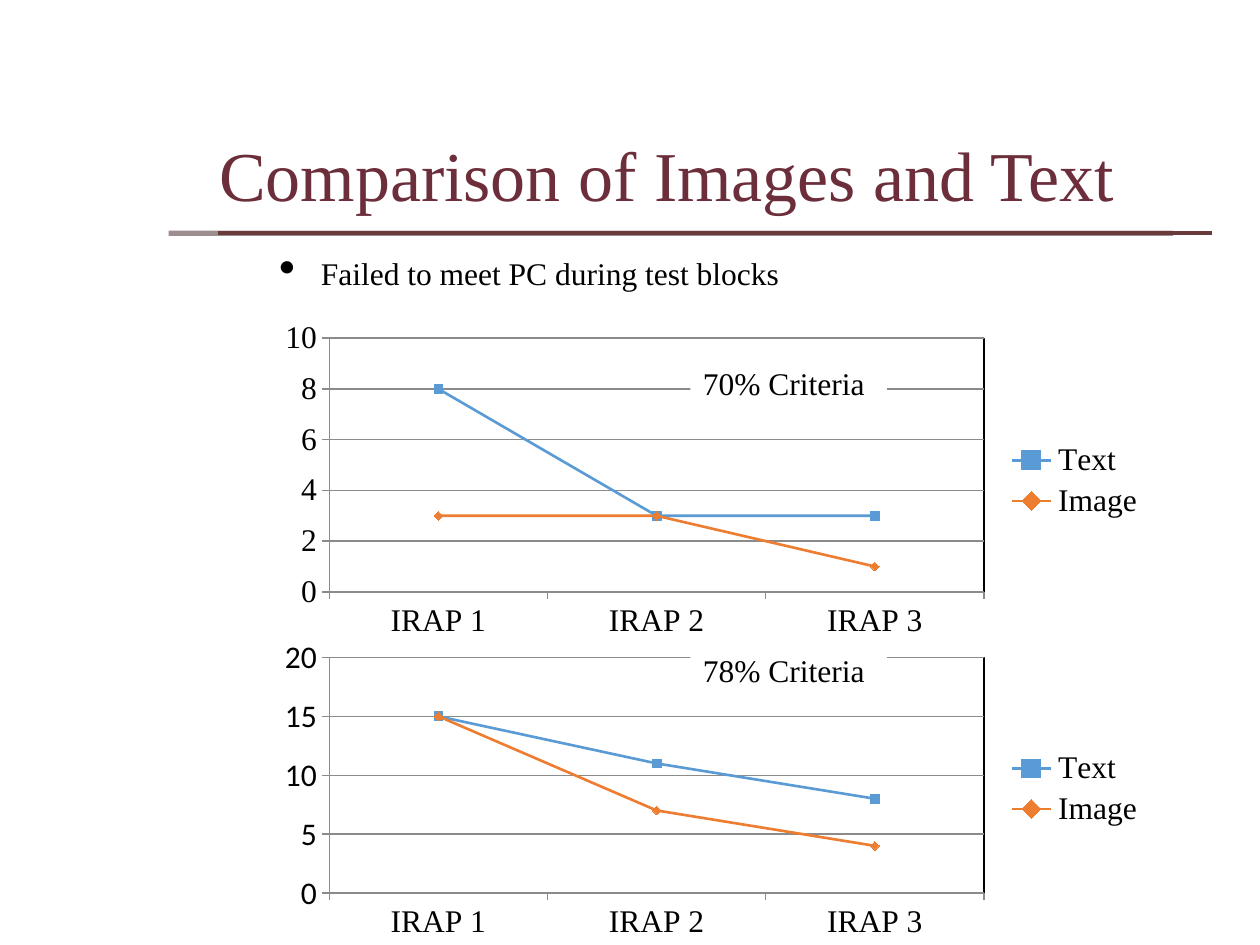
"""Build the "Comparison of Images and Text" slide with two line charts."""
from lxml.etree import SubElement
from pptx import Presentation
from pptx.chart.data import CategoryChartData
from pptx.dml.color import RGBColor
from pptx.enum.chart import (XL_CHART_TYPE as CT, XL_LEGEND_POSITION as LP,
                             XL_MARKER_STYLE as MS, XL_TICK_MARK as TM)
from pptx.enum.shapes import MSO_CONNECTOR as CONN, MSO_SHAPE as SHAPE
from pptx.enum.text import MSO_ANCHOR as ANCHOR
from pptx.oxml import parse_xml
from pptx.oxml.ns import nsdecls, qn
from pptx.util import Cm, Pt

SERIF, SANS = "Times New Roman", "Calibri"
COLORS = {"title": "6B2E3A", "text": "000000", "rule": "683A3C", "shade": "3C1C21",
          "grid": "8B8B8B", "frame": "000000", "mask": "FFFFFF",
          "Text": "5B9BD5", "Image": "ED7D31"}
MARKERS = {"Text": MS.SQUARE, "Image": MS.DIAMOND}
CATEGORIES = ["IRAP 1", "IRAP 2", "IRAP 3"]
CHART_LEFT, CHART_WIDTH = 5.38, 17.96


def rgb(name):
    return RGBColor.from_string(COLORS[name])


def set_font(font, size, color="text", name=SERIF):
    font.size, font.name = Pt(size), name
    font.color.rgb = rgb(color)


def add_rule(s, x1, x2, y, color, width, alpha=None):
    line = s.shapes.add_connector(CONN.STRAIGHT, Cm(x1), Cm(y), Cm(x2), Cm(y))
    line.line.color.rgb, line.line.width = rgb(color), Pt(width)
    sp_pr = line._element.spPr
    if alpha:
        clr = sp_pr.find(".//" + qn("a:srgbClr"))
        SubElement(clr, qn("a:alpha"), val=str(alpha * 1000))
    SubElement(sp_pr, qn("a:effectLst"))


def add_text(s, box, text, size, color="text", spacing=0.9):
    tb = s.shapes.add_textbox(*map(Cm, box))
    tf = tb.text_frame
    tf.word_wrap = True
    p = tf.paragraphs[0]
    p.text, p.line_spacing = text, spacing
    set_font(p.font, size, color)
    return tb


def add_title(s, box, text):
    tf = add_text(s, box, text, 40, "title").text_frame
    tf.vertical_anchor, tf.margin_bottom = ANCHOR.BOTTOM, Cm(0.33)


def add_bullet(s, box, text):
    p = add_text(s, box, text, 18).text_frame.paragraphs[0]
    p_pr = p._p.get_or_add_pPr()
    p_pr.set("marL", str(Cm(0.84)))
    p_pr.set("indent", str(Cm(-0.84)))
    for xml in ('<a:buSzPct %s val="150000"/>', '<a:buChar %s char="•"/>'):
        p_pr.insert_element_before(parse_xml(xml % nsdecls("a")), "a:tabLst", "a:defRPr")


def add_label(s, top, text):
    sp = s.shapes.add_shape(SHAPE.RECTANGLE, Cm(13.92), Cm(top), Cm(3.96), Cm(1.02))
    sp.shadow.inherit = False
    sp.fill.solid()
    sp.fill.fore_color.rgb = rgb("mask")
    sp.line.fill.background()
    tf = sp.text_frame
    tf.vertical_anchor, tf.word_wrap = ANCHOR.TOP, False
    p = tf.paragraphs[0]
    p.text, p.alignment = text, 1
    set_font(p.font, 18)


def frame_plot(chart, y, h):
    """Fix the inner plot area, as fractions of the chart, and outline it."""
    plot = chart._chartSpace.find(".//" + qn("c:plotArea"))
    for old in plot.findall(qn("c:layout")):
        plot.remove(old)
    sizes = "".join(f'<c:{k} val="{v}"/>' for k, v in
                    zip("xywh", (0.07, y, 0.735, h)))
    plot.insert(0, parse_xml(
        f'<c:layout {nsdecls("c")}><c:manualLayout><c:layoutTarget val="inner"/>'
        f'<c:xMode val="edge"/><c:yMode val="edge"/>{sizes}</c:manualLayout></c:layout>'))
    plot.append(parse_xml(
        f'<c:spPr {nsdecls("c", "a")}><a:noFill/><a:ln w="9525"><a:solidFill>'
        f'<a:srgbClr val="{COLORS["frame"]}"/></a:solidFill></a:ln></c:spPr>'))


def add_line_chart(s, top, height, series, top_value, step, plot, value_font=SERIF):
    data = CategoryChartData()
    data.categories = CATEGORIES
    for name, values in series.items():
        data.add_series(name, values)
    chart = s.shapes.add_chart(CT.LINE_MARKERS, Cm(CHART_LEFT), Cm(top),
                               Cm(CHART_WIDTH), Cm(height), data).chart
    set_font(chart.font, 18, name=value_font)
    chart.has_title = False
    chart.has_legend = True
    chart.legend.position, chart.legend.include_in_layout = LP.RIGHT, False
    set_font(chart.legend.font, 18)
    cat, val = chart.category_axis, chart.value_axis
    val.minimum_scale, val.maximum_scale, val.major_unit = 0, top_value, step
    val.has_major_gridlines = True
    val.major_gridlines.format.line.color.rgb = rgb("grid")
    for axis, font in ((cat, SERIF), (val, value_font)):
        axis.major_tick_mark = TM.OUTSIDE
        axis.format.line.color.rgb = rgb("grid")
        set_font(axis.tick_labels.font, 18, name=font)
    chart.plots[0].vary_by_categories = False
    for ser in chart.plots[0].series:
        color, marker = rgb(ser.name), ser.marker
        ser.smooth = False
        ser.format.line.color.rgb, ser.format.line.width = color, Pt(1.5)
        marker.style, marker.size = MARKERS[ser.name], 5
        marker.format.fill.solid()
        marker.format.fill.fore_color.rgb = color
        marker.format.line.color.rgb = color
    frame_plot(chart, *plot)


def main():
    prs = Presentation()
    prs.slide_width, prs.slide_height = Cm(25.4), Cm(19.05)
    s = prs.slides.add_slide(prs.slide_layouts[6])
    add_rule(s, 3.4, 23.65, 4.7, "shade", 3, alpha=50)
    add_rule(s, 4.39, 24.43, 4.7, "rule", 2.5)
    add_bullet(s, (5.38, 5.08, 18.26, 13.28), "Failed to meet PC during test blocks")
    add_title(s, (4.17, 1.02, 20.55, 3.68), "Comparison of Images and Text")
    add_line_chart(s, 6.35, 6.68, {"Text": (8, 3, 3), "Image": (3, 3, 1)},
                   10, 2, (0.07, 0.766))
    add_line_chart(s, 12.75, 6.3, {"Text": (15, 11, 8), "Image": (15, 7, 4)},
                   20, 5, (0.08, 0.754), SANS)
    add_label(s, 7.21, "70% Criteria")
    add_label(s, 13, "78% Criteria")
    prs.save("out.pptx")


if __name__ == "__main__":
    main()
